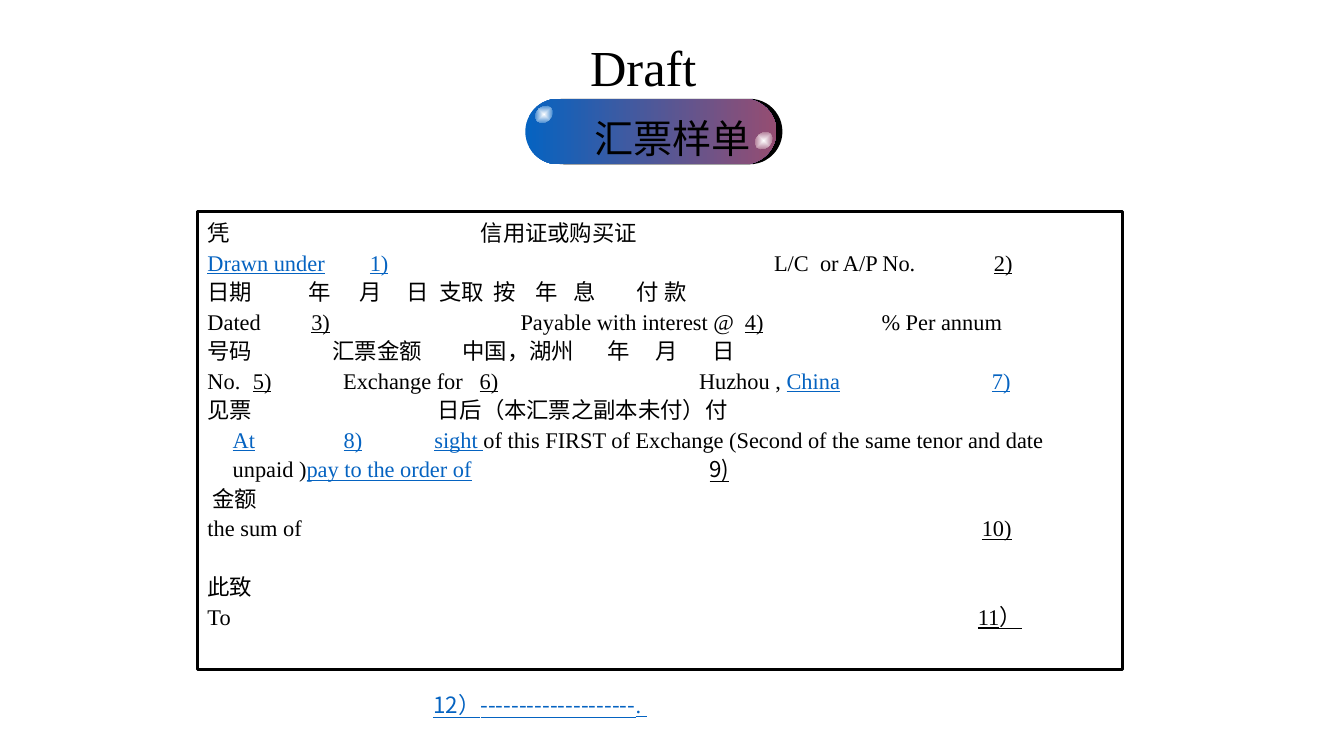
from lxml import etree
from pptx import Presentation
from pptx.dml.color import RGBColor
from pptx.enum.shapes import MSO_SHAPE
from pptx.enum.text import MSO_ANCHOR, PP_ALIGN
from pptx.oxml.ns import qn
from pptx.util import Inches, Pt

BLACK = RGBColor(0x00, 0x00, 0x00)
WHITE = RGBColor(0xFF, 0xFF, 0xFF)
BLUE = RGBColor(0x05, 0x63, 0xC1)
PLUM = RGBColor(0x95, 0x4D, 0x72)
LATIN = "Times New Roman"
CHINESE = "Noto Sans CJK SC"


def style_run(run, size, font, color=BLACK, underline=False):
    """Format a run; Chinese characters always use the Chinese font."""
    run.font.size = Pt(size)
    run.font.name = font
    run.font.color.rgb = color
    run.font.underline = underline
    east_asian = etree.SubElement(run.font._element, qn("a:ea"))
    east_asian.set("typeface", CHINESE)


def add_plain_shape(kind, left, top, width, height):
    shape = slide.shapes.add_shape(
        kind, Inches(left), Inches(top), Inches(width), Inches(height))
    shape.shadow.inherit = False
    shape.line.fill.background()
    return shape


prs = Presentation()
prs.slide_width, prs.slide_height = Inches(13.33), Inches(7.5)
slide = prs.slides.add_slide(prs.slide_layouts[5])

# Title
title = slide.shapes.title
title.left, title.top = Inches(1.83), Inches(0.4)
title.width, title.height = Inches(9.59), Inches(0.52)
title.text_frame.text = "Draft"
title.text_frame.margin_right = Inches(0.59)
title.text_frame.vertical_anchor = MSO_ANCHOR.MIDDLE
title.text_frame.paragraphs[0].alignment = PP_ALIGN.CENTER
style_run(title.text_frame.paragraphs[0].runs[0], 36, LATIN)

# Pill with its dark edge and two highlights
edge = add_plain_shape(MSO_SHAPE.ROUNDED_RECTANGLE, 5.27, 0.98, 2.49, 0.65)
edge.fill.solid()
edge.fill.fore_color.rgb = BLACK
pill = add_plain_shape(MSO_SHAPE.ROUNDED_RECTANGLE, 5.21, 0.98, 2.49, 0.65)
pill.fill.gradient()
pill.fill.gradient_angle = 0
for stop, color in zip(pill.fill.gradient_stops, (BLUE, PLUM)):
    stop.color.rgb = color
for half in (edge, pill):
    half.adjustments[0] = 0.5

for left, top, rim in ((5.3, 1.06, BLUE), (7.48, 1.32, PLUM)):
    highlight = add_plain_shape(MSO_SHAPE.OVAL, left, top, 0.19, 0.15)
    highlight.rotation = 317.2
    highlight.fill.gradient()
    for stop, color in zip(highlight.fill.gradient_stops, (WHITE, rim)):
        stop.color.rgb = color
    gradient = highlight._element.spPr.find(qn("a:gradFill"))
    gradient.remove(gradient.find(qn("a:lin")))
    radial = etree.SubElement(gradient, qn("a:path"))
    radial.set("path", "shape")
    center = etree.SubElement(radial, qn("a:fillToRect"))
    for side in "ltrb":
        center.set(side, "50000")

subtitle = slide.shapes.add_textbox(
    Inches(3.61), Inches(1.14), Inches(6.12), Inches(0.52))
subtitle.text_frame.word_wrap = True
subtitle.text_frame.text = "汇票样单"
subtitle_line = subtitle.text_frame.paragraphs[0]
subtitle_line.alignment = PP_ALIGN.CENTER
subtitle_line.line_spacing = 0.9
style_run(subtitle_line.runs[0], 28, CHINESE)

# Draft form: per line the tab stops in inches, then its runs.
# Run styles: zh Chinese, en plain, blank underlined, key underlined in blue.
STYLES = {
    "zh": (CHINESE, BLACK, False),
    "en": (LATIN, BLACK, False),
    "blank": (LATIN, BLACK, True),
    "zh blank": (CHINESE, BLACK, True),
    "key": (LATIN, BLUE, True),
    "zh key": (CHINESE, BLUE, True),
}
BREAK = ("break", "")
FORM_LINES = [
    ([2.71], [("zh", "凭\t信用证或购买证")]),
    ([1.61, 5.62, 7.8, 8.33],
     [("key", "Drawn under\t1)\t"), ("en", "L/C  or A/P No."),
      ("blank", "\t2)\t")]),
    ([1, 1.51, 1.97, 2.3, 2.84, 3.25, 3.63, 4.26],
     [("zh", "日期\t年\t月\t日\t支取\t按\t年\t息\t付 款")]),
    ([1.03, 3.05, 5.33, 6.63],
     [("en", "Dated"), ("blank", "\t3)\t"),
      ("en", " Payable with interest @"), ("blank", "\t4)\t"),
      ("en", " % Per annum")]),
    ([1.24, 2.53, 3.97, 4.44, 5.01],
     [("zh", "号码\t汇票金额\t中国，湖州\t年\t月\t日")]),
    ([0.45, 1.29, 2.7, 4.82, 7.78, 8.7],
     [("en", "No."), ("blank", "\t5)\t"), ("en", " Exchange for"),
      ("blank", "\t6)\t"), ("en", " Huzhou , "), ("key", "China\t7)\t")]),
    ([2.28], [("zh", "见票\t日后（本汇票之副本未付）付")]),
    ([0.25, 1.35, 2.25, 4.98, 8.65],
     [("en", "\t"), ("key", "At\t8)\tsight "),
      ("en", "of this FIRST of Exchange (Second of the same tenor and date"),
      BREAK, ("en", "\tunpaid )"), ("key", "pay to the order of\t"),
      ("zh blank", "9)\t")]),
    ([], [("zh", " 金额")]),
    ([2.39, 7.68, 8.95],
     [("en", "the sum of "), ("blank", "\t\t10)\t"), BREAK, ("blank", "\t")]),
    ([], [("zh", "此致")]),
    ([0.1, 7.64, 8.95],
     [("en", "To "), ("blank", "\t11）\t"), BREAK, ("blank", "\t")]),
    ([2.24],
     [("zh", "\t"), ("zh key", "12）--------------------"), ("key", ". ")]),
]

form = add_plain_shape(MSO_SHAPE.RECTANGLE, 1.96, 2.1, 9.17, 4.54)
form.fill.solid()
form.fill.fore_color.rgb = WHITE
form.line.color.rgb = BLACK
form.line.width = Pt(2.25)
form_text = form.text_frame
form_text.word_wrap = True
form_text.vertical_anchor = MSO_ANCHOR.TOP

for index, (stops, runs) in enumerate(FORM_LINES):
    line = form_text.add_paragraph() if index else form_text.paragraphs[0]
    line.alignment = PP_ALIGN.LEFT
    line.line_spacing = 1.1
    if stops:
        tab_list = etree.SubElement(line._p.get_or_add_pPr(), qn("a:tabLst"))
        for position in stops:
            tab = etree.SubElement(tab_list, qn("a:tab"))
            tab.set("pos", str(int(Inches(position))))
            tab.set("algn", "l")
    for style, words in runs:
        if style == "break":
            line.add_line_break()
            continue
        run = line.add_run()
        run.text = words
        style_run(run, 16, *STYLES[style])
line.space_before = Pt(21)

prs.save("out.pptx")
